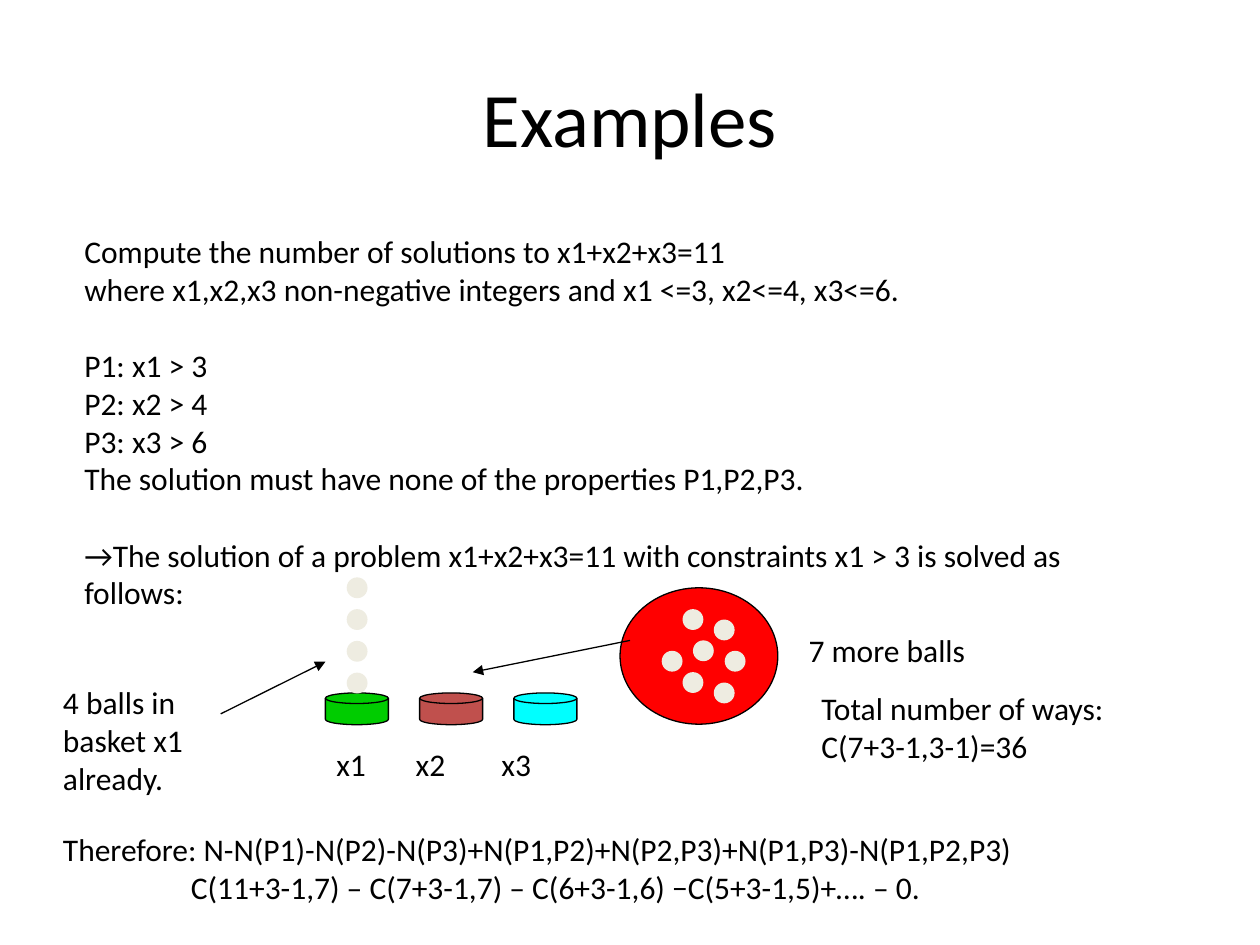
from lxml import etree
from pptx import Presentation
from pptx.dml.color import RGBColor
from pptx.enum.shapes import MSO_CONNECTOR, MSO_SHAPE
from pptx.enum.text import MSO_ANCHOR, MSO_AUTO_SIZE, PP_ALIGN
from pptx.oxml.ns import qn
from pptx.util import Cm, Pt

OVAL = MSO_SHAPE.OVAL
DISK = MSO_SHAPE.FLOWCHART_MAGNETIC_DISK
STRAIGHT = MSO_CONNECTOR.STRAIGHT
FIT_SHAPE = MSO_AUTO_SIZE.SHAPE_TO_FIT_TEXT
MIDDLE = MSO_ANCHOR.MIDDLE
LEFT, CENTER = PP_ALIGN.LEFT, PP_ALIGN.CENTER

BLACK = RGBColor(0x00, 0x00, 0x00)
RED = RGBColor(0xFF, 0x00, 0x00)
GREEN = RGBColor(0x00, 0xCC, 0x00)
BRICK = RGBColor(0xC0, 0x50, 0x4D)
CYAN = RGBColor(0x00, 0xFF, 0xFF)
CREAM = RGBColor(0xEE, 0xEC, 0xE1)

FONT = "Calibri"
BLANK_LINE = Pt(22)
OUTLINE = Pt(0.75)
BALL = 0.42

prs = Presentation()
prs.slide_width, prs.slide_height = Cm(25.4), Cm(19.05)
slide = prs.slides.add_slide(prs.slide_layouts[5])
shapes = slide.shapes


def add_figure(kind, left, top, width, height, fill, outlined=True):
    figure = shapes.add_shape(kind, Cm(left), Cm(top), Cm(width), Cm(height))
    figure.shadow.inherit = False
    figure.fill.solid()
    figure.fill.fore_color.rgb = fill
    if outlined:
        figure.line.color.rgb = BLACK
        figure.line.width = OUTLINE
    else:
        figure.line.fill.background()


def add_text(left, top, width, height, lines):
    frame = shapes.add_textbox(Cm(left), Cm(top), Cm(width), Cm(height)).text_frame
    frame.word_wrap = False
    frame.auto_size = FIT_SHAPE
    frame.text = "\n".join(lines)
    for paragraph in frame.paragraphs:
        paragraph.alignment = LEFT
        paragraph.font.name = FONT
        paragraph.font.size = Pt(18)
        paragraph.font.color.rgb = BLACK
    return frame


# Title
title = shapes.title
title.left, title.top, title.width, title.height = Cm(1.27), Cm(0.76), Cm(22.86), Cm(3.18)
title.text_frame.text = "Examples"
title.text_frame.vertical_anchor = MIDDLE
heading = title.text_frame.paragraphs[0]
heading.alignment = CENTER
heading.font.name = FONT
heading.font.size = Pt(44)
heading.font.color.rgb = BLACK

# Pool of remaining balls, behind the text
add_figure(OVAL, 12.5, 11.85, 3.18, 2.75, RED)

# Problem statement
problem = add_text(1.45, 4.55, 20.5, 7.9, [
    "Compute the number of solutions to x1+x2+x3=11",
    "where x1,x2,x3 non-negative integers and x1 <=3, x2<=4, x3<=6.",
    "P1: x1 > 3",
    "P2: x2 > 4",
    "P3: x3 > 6",
    "The solution must have none of the properties P1,P2,P3.",
    "→The solution of a problem x1+x2+x3=11 with constraints x1 > 3 is solved as",
    "follows:",
])
for section_start in (2, 6):
    problem.paragraphs[section_start].space_before = BLANK_LINE

# Baskets
for i, colour in enumerate((GREEN, BRICK, CYAN)):
    add_figure(DISK, 6.56 + 1.9 * i, 13.97, 1.27, 0.64, colour)

# Basket labels, spaced by tab stops
basket_labels = add_text(6.53, 14.9, 5.15, 1.02, ["x1\tx2\tx3"])
basket_labels.word_wrap = True
label_props = basket_labels.paragraphs[0]._p.get_or_add_pPr()
tab_list = etree.Element(qn("a:tabLst"))
for stop in (1.6, 3.33):
    etree.SubElement(tab_list, qn("a:tab"), pos=str(Cm(stop)), algn="l")
label_props.insert(0, tab_list)

# Balls: four stacked in basket x1, seven left in the pool
stacked_balls = [(6.99, 11.64 + 0.64 * i) for i in range(4)]
pool_balls = [(13.34, 13.12), (13.76, 13.55), (14.61, 13.12), (14.39, 13.76),
              (13.97, 12.91), (13.76, 12.28), (14.39, 12.49)]
for left, top in stacked_balls + pool_balls:
    add_figure(OVAL, left, top, BALL, BALL, CREAM, outlined=False)

# Arrows to the baskets
for x1, y1, x2, y2 in ((12.7, 12.91, 9.53, 13.55), (4.45, 14.39, 6.56, 13.34)):
    arrow = shapes.add_connector(STRAIGHT, Cm(x1), Cm(y1), Cm(x2), Cm(y2))
    arrow.line.color.rgb = BLACK
    arrow.line.width = OUTLINE
    etree.SubElement(arrow.line._get_or_add_ln(), qn("a:tailEnd"), type="triangle")
    etree.SubElement(arrow._element.spPr, qn("a:effectLst"))

# Notes around the drawing
add_text(16.05, 12.6, 3.96, 1.02, ["7 more balls"])
add_text(1.02, 13.65, 3.23, 2.54, ["4 balls in", "basket x1", "already."])
add_text(16.31, 13.77, 6.4, 1.8, ["Total number of ways:", "C(7+3-1,3-1)=36"])

# Conclusion, second line indented under the formula
conclusion = add_text(1.02, 16.61, 19.86, 1.8, [
    "Therefore: N-N(P1)-N(P2)-N(P3)+N(P1,P2)+N(P2,P3)+N(P1,P3)-N(P1,P2,P3)",
    "C(11+3-1,7) – C(7+3-1,7) – C(6+3-1,6) −C(5+3-1,5)+…. – 0.",
])
conclusion.paragraphs[1]._p.get_or_add_pPr().set("marL", str(Cm(2.58)))

prs.save("out.pptx")
